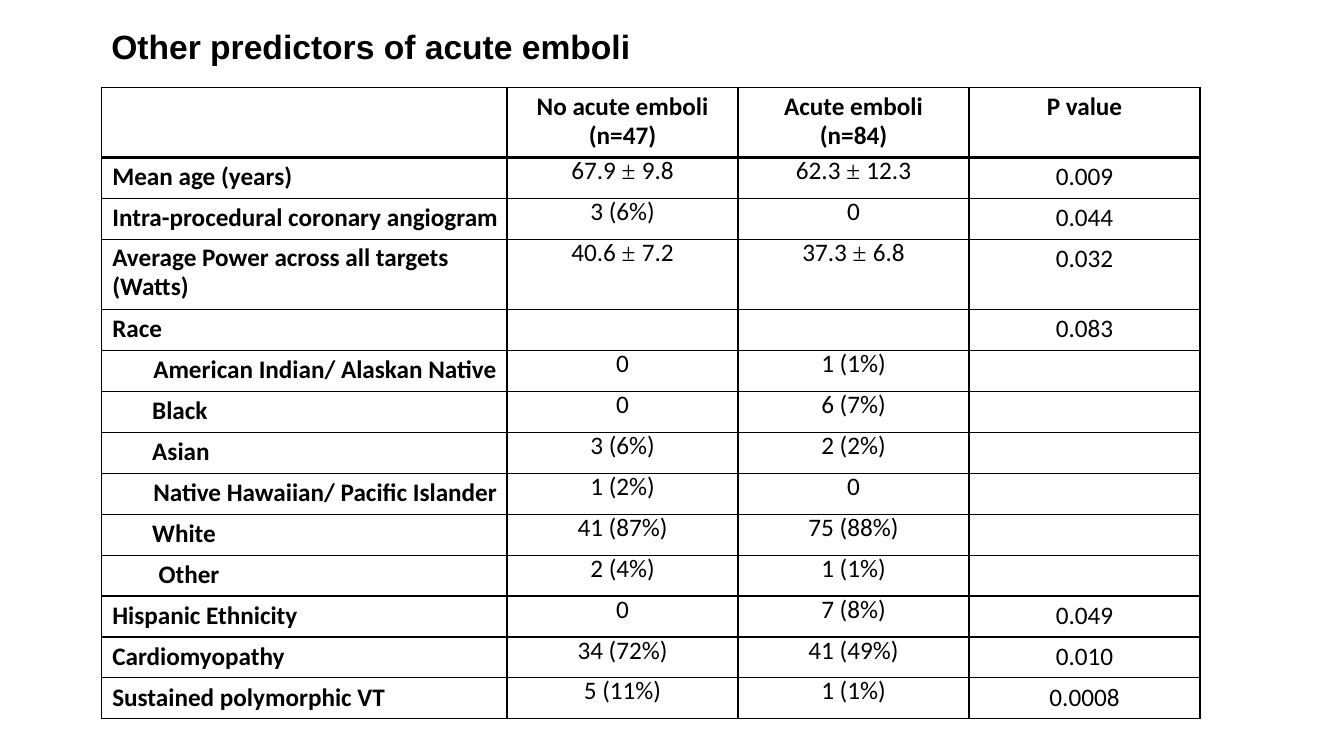
from lxml.etree import SubElement
from pptx import Presentation
from pptx.dml.color import RGBColor
from pptx.enum.text import MSO_ANCHOR, PP_ALIGN
from pptx.oxml import parse_xml
from pptx.oxml.ns import nsdecls, qn
from pptx.util import Emu, Pt

PX = 9525  # 96 px to the inch
BLACK = RGBColor(0, 0, 0)
COLS = [386, 220, 220, 220]
LOW, HIGH = 39, 67
LEFT, RIGHT = PP_ALIGN.LEFT, PP_ALIGN.CENTER
HEAD = ["", "No acute emboli (n=47)", "Acute emboli (n=84)", "P value"]

# indent in px, label, no emboli, emboli, p value
ROWS = [
    (10, "Mean age (years)", "67.9 ± 9.8", "62.3 ± 12.3", "0.009"),
    (10, "Intra-procedural coronary angiogram", "3 (6%)", "0", "0.044"),
    (10, "Average Power across all targets (Watts)", "40.6 ± 7.2", "37.3 ± 6.8", "0.032"),
    (10, "Race", "", "", "0.083"),
    (49, "American Indian/ Alaskan Native", "0", "1 (1%)", ""),
    (48, "Black", "0", "6 (7%)", ""),
    (48, "Asian", "3 (6%)", "2 (2%)", ""),
    (49, "Native Hawaiian/ Pacific Islander", "1 (2%)", "0", ""),
    (48, "White", "41 (87%)", "75 (88%)", ""),
    (54, "Other", "2 (4%)", "1 (1%)", ""),
    (10, "Hispanic Ethnicity", "0", "7 (8%)", "0.049"),
    (10, "Cardiomyopathy", "34 (72%)", "41 (49%)", "0.010"),
    (10, "Sustained polymorphic VT", "5 (11%)", "1 (1%)", "0.0008"),
]
TALL = {0, 3}

TITLE = {"name": "Arial", "size": Pt(24), "bold": True}
BOLD = {"name": "Calibri", "size": Pt(18), "bold": True}
PLAIN = {**BOLD, "bold": False}
SIGN = {**PLAIN, "name": "Times New Roman"}
HEADER = {"alignment": PP_ALIGN.CENTER, "line_spacing": Pt(21.1), "space_before": Pt(3.6)}
LABEL = {"alignment": PP_ALIGN.LEFT, "space_before": Pt(2.5)}
WRAP = {**HEADER, "alignment": PP_ALIGN.LEFT}
COUNT = {"alignment": PP_ALIGN.CENTER, "line_spacing": Pt(20.6)}
RATIO = {"alignment": PP_ALIGN.CENTER, "space_before": Pt(2.5)}


def px(count):
    return Emu(count * PX)


def style(item, form):
    for name, value in form.items():
        setattr(item, name, value)


def add_run(para, text, form):
    run = para.add_run()
    run.text = text
    style(run.font, form)
    run.font.color.rgb = BLACK


def pad(item, left=0, top=0, right=0):
    style(item, {"margin_left": px(left), "margin_top": px(top),
                 "margin_right": px(right), "margin_bottom": 0})


def edge(cell, top, base):
    """Draw the four borders; top and base are widths in points."""
    cell.fill.background()
    props = cell._tc.get_or_add_tcPr()
    for spot, (side, width) in enumerate(zip("LRTB", (1, 1, top, base))):
        line = parse_xml(f'<a:ln{side} {nsdecls("a")} w="{Pt(width)}"/>')
        fill = SubElement(line, qn("a:solidFill"))
        SubElement(fill, qn("a:srgbClr"), val=str(BLACK))
        props.insert(spot, line)


def write(cell, text, para_form, font):
    """Write the cell text, with its plus-minus sign in another font."""
    para = cell.text_frame.paragraphs[0]
    style(para, para_form)
    start, sign, rest = text.partition("± ")
    for part, form in ((start, font), (sign, SIGN), (rest, font)):
        if part:
            add_run(para, part, form)


def add_title(slide, text):
    title = slide.shapes.title
    style(title, {"left": px(106), "top": px(24), "width": px(496), "height": px(41)})
    frame = title.text_frame
    pad(frame, top=1)
    style(frame, {"word_wrap": False, "vertical_anchor": MSO_ANCHOR.TOP})
    para = frame.paragraphs[0]
    style(para, {"alignment": PP_ALIGN.LEFT, "space_before": Pt(1)})
    add_run(para, text, TITLE)


def fill_head(table):
    for col, text in enumerate(HEAD):
        cell = table.cell(0, col)
        side = 20 if col in (1, 2) else 0
        pad(cell, side, 5, side)
        write(cell, text, HEADER, BOLD)
        edge(cell, 1, 3)


def fill_row(table, row, indent, texts):
    label = WRAP if row in TALL else LABEL
    forms = [(label, BOLD, indent, 4), (COUNT, PLAIN, 0, 0),
             (COUNT, PLAIN, 0, 0), (RATIO, PLAIN, 0, 4)]
    for col, (text, (para, font, left, top)) in enumerate(zip(texts, forms)):
        cell = table.cell(row, col)
        pad(cell, left, top)
        write(cell, text, para, font)
        edge(cell, 3 if row == 1 else 1, 1)


def add_grid(slide):
    heights = [HIGH if row in TALL else LOW for row in range(len(ROWS) + 1)]
    table = slide.shapes.add_table(len(heights), len(COLS), px(97), px(83),
                                   px(sum(COLS)), px(sum(heights))).table
    style(table, {"first_row": False, "horz_banding": False})
    for col, width in zip(table.columns, COLS):
        col.width = px(width)
    for row, height in zip(table.rows, heights):
        row.height = px(height)
    fill_head(table)
    for row, (indent, *texts) in enumerate(ROWS, 1):
        fill_row(table, row, indent, texts)


def main():
    deck = Presentation()
    style(deck, {"slide_width": px(1280), "slide_height": px(720)})
    slide = deck.slides.add_slide(deck.slide_layouts[5])
    add_title(slide, "Other predictors of acute emboli")
    add_grid(slide)
    deck.save("out.pptx")


if __name__ == "__main__":
    main()
